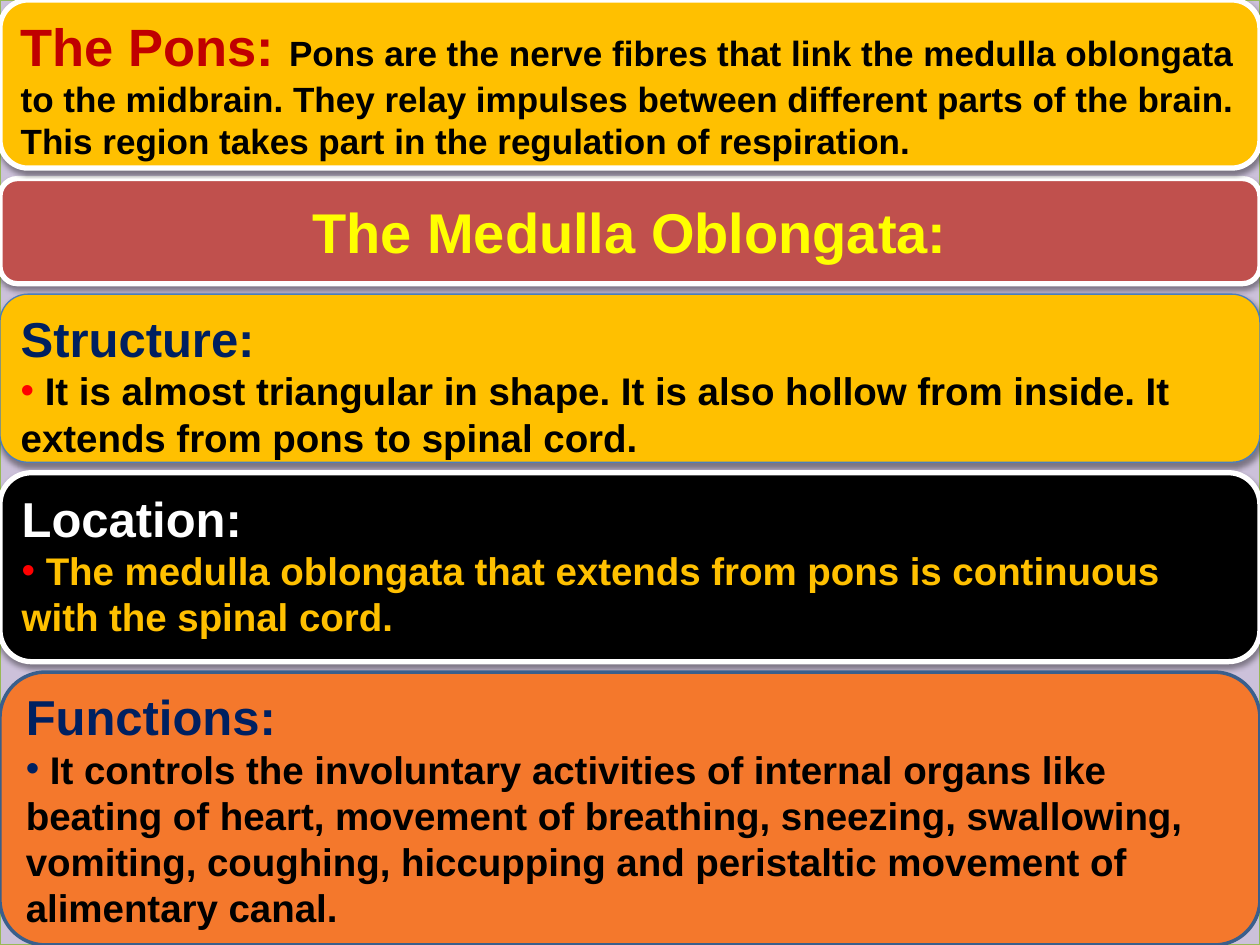
"""Build a slide on the pons and the medulla oblongata as five stacked cards."""
from dataclasses import dataclass

from lxml.etree import SubElement
from pptx import Presentation
from pptx.dml.color import RGBColor
from pptx.enum.shapes import MSO_SHAPE
from pptx.enum.text import MSO_ANCHOR, MSO_AUTO_SIZE, PP_ALIGN
from pptx.oxml import parse_xml
from pptx.oxml.ns import nsdecls, qn
from pptx.util import Cm, Pt


@dataclass(frozen=True)
class Theme:
    font: str = "Arial"
    banner: int = 32
    lead: int = 30
    head: int = 28
    body: int = 22
    note: int = 20
    lilac: str = "CCC1DA"
    green: str = "98B955"
    gold: str = "FFC000"
    rose: str = "C0504D"
    black: str = "000000"
    white: str = "FFFFFF"
    orange: str = "F4782C"
    navy: str = "002060"
    red: str = "FF0000"
    crimson: str = "C00000"
    yellow: str = "FFFF00"
    steel: str = "3A5F8C"
    blue: str = "4B7EBC"


T = Theme()
WIDTH, HEIGHT, GAP = 25.4, 19.05, 0.21


def topic(head, tone, text, dot, ink):
    return [
        (False, [(head, T.head, tone)]),
        (True, [(" ", T.body, dot), (text, T.body, ink)]),
    ]


CARDS = [
    dict(slot=1, tall=3.39, fill=T.gold, line=(T.white, 3), paras=[
        (False, [
            ("The Pons: ", T.lead, T.crimson),
            ("Pons are the nerve fibres that link the medulla oblongata to the "
             "midbrain. They relay impulses between different parts of the brain. "
             "This region takes part in the regulation of respiration.",
             T.note, T.black),
        ]),
    ]),
    dict(slot=0, tall=2.12, fill=T.rose, line=(T.white, 3), middle=True,
         align=PP_ALIGN.CENTER,
         paras=[(False, [("The Medulla Oblongata:", T.banner, T.yellow)])]),
    dict(slot=2, tall=3.39, fill=T.gold, line=(T.blue, 0.75), paras=topic(
        "Structure:", T.navy,
        "It is almost triangular in shape. It is also hollow from inside. "
        "It extends from pons to spinal cord.", T.red, T.black)),
    dict(slot=3, tall=3.81, fill=T.black, line=(T.white, 3), paras=topic(
        "Location:", T.white,
        "The medulla oblongata that extends from pons is continuous "
        "with the spinal cord.", T.red, T.gold)),
    dict(slot=4, tall=5.5, fill=T.orange, line=(T.steel, 2), middle=True,
         shade=False, paras=topic(
             "Functions:", T.navy,
             "It controls the involuntary activities of internal organs like "
             "beating of heart, movement of breathing, sneezing, swallowing, "
             "vomiting, coughing, hiccupping and peristaltic movement of "
             "alimentary canal.", T.navy, T.black)),
]


def paint(shape, fill, line, shade=True):
    tone, width = line
    shape.fill.solid()
    shape.fill.fore_color.rgb = RGBColor.from_string(fill)
    shape.line.color.rgb = RGBColor.from_string(tone)
    shape.line.width = Pt(width)
    shape.shadow.inherit = False
    if shade:
        shape._element.spPr.find(qn("a:effectLst")).append(parse_xml(
            f'<a:outerShdw {nsdecls("a")} blurRad="40000" dist="20000" '
            'dir="5400000" rotWithShape="0"><a:srgbClr val="000000">'
            '<a:alpha val="38000"/></a:srgbClr></a:outerShdw>'))


def panel(slide, kind, top, tall, layer):
    shape = slide.shapes.add_shape(kind, Cm(0), Cm(top), Cm(WIDTH), Cm(tall))
    slide.shapes._spTree.insert(layer, shape._element)
    return shape


def write(para, runs, dotted, align):
    para.alignment = align
    para.line_spacing = 1.0
    para.space_before = para.space_after = Pt(0)
    props = para._p.get_or_add_pPr()
    props.set("marL", "0")
    props.set("indent", "0")
    if dotted:
        SubElement(props, qn("a:buFont")).set("typeface", T.font)
        SubElement(props, qn("a:buChar")).set("char", "•")
    else:
        SubElement(props, qn("a:buNone"))
    for text, size, tone in runs:
        run = para.add_run()
        run.text = text
        run.font.name = T.font
        run.font.size = Pt(size)
        run.font.bold = True
        run.font.color.rgb = RGBColor.from_string(tone)


def place(slide, shape, card, top):
    shape.left, shape.top = Cm(0), Cm(top)
    shape.width, shape.height = Cm(WIDTH), Cm(card["tall"])
    if card["slot"] == 0:
        face = panel(slide, MSO_SHAPE.ROUNDED_RECTANGLE, top, card["tall"], 3)
    else:
        face = shape
        face._element.spPr.insert(1, parse_xml(
            f'<a:prstGeom {nsdecls("a")} prst="roundRect"><a:avLst/></a:prstGeom>'))
    paint(face, card["fill"], card["line"], card.get("shade", True))
    frame = shape.text_frame
    frame.word_wrap = True
    frame.auto_size = MSO_AUTO_SIZE.NONE
    frame.vertical_anchor = MSO_ANCHOR.MIDDLE if card.get("middle") else MSO_ANCHOR.TOP
    for spot, (dotted, runs) in enumerate(card["paras"]):
        para = frame.add_paragraph() if spot else frame.paragraphs[0]
        write(para, runs, dotted, card.get("align", PP_ALIGN.LEFT))


def main():
    deck = Presentation()
    deck.slide_width, deck.slide_height = Cm(WIDTH), Cm(HEIGHT)
    slide = deck.slides.add_slide(deck.slide_layouts.get_by_name("Comparison"))
    slots = {item.placeholder_format.idx: item for item in slide.placeholders}
    back = panel(slide, MSO_SHAPE.RECTANGLE, 0, HEIGHT, 2)
    paint(back, T.lilac, (T.green, 0.75))
    top = 0
    for card in CARDS:
        place(slide, slots[card["slot"]], card, top)
        top += card["tall"] + GAP
    deck.save("out.pptx")


if __name__ == "__main__":
    main()
